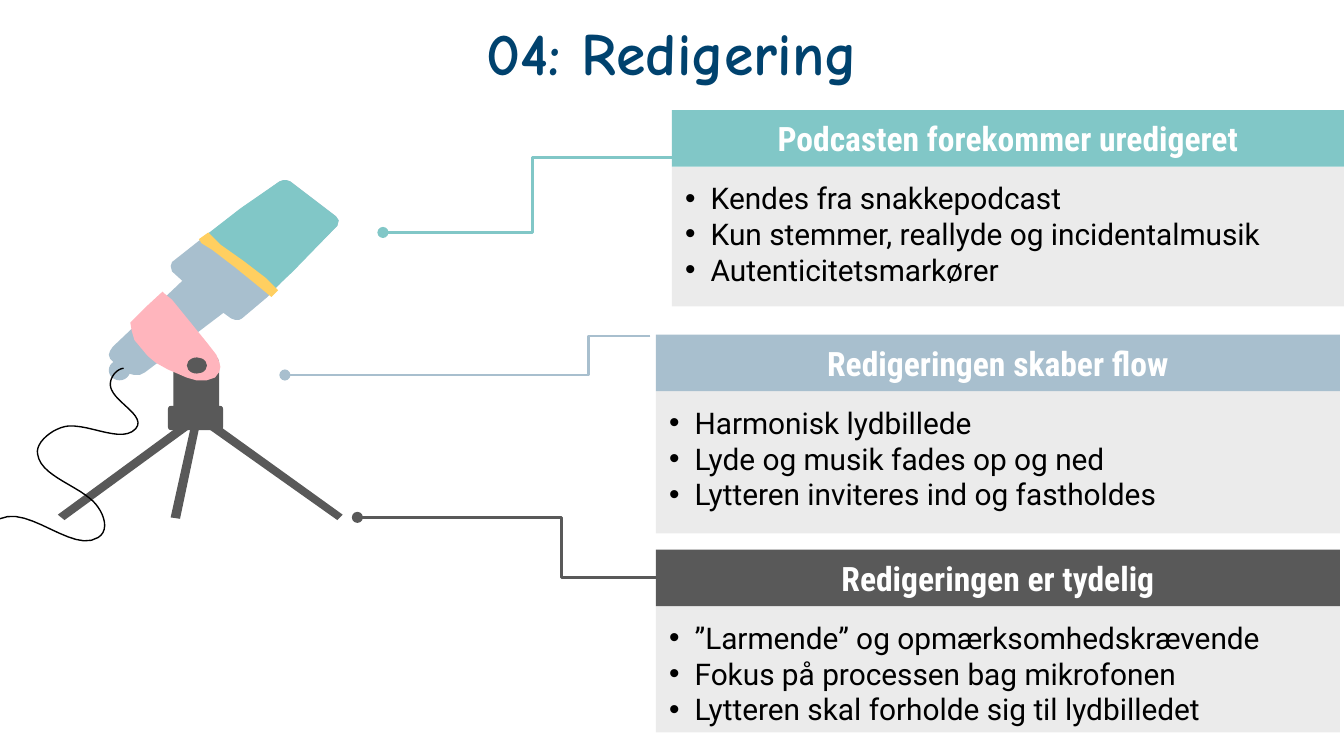
import pptx
import pptx.util
import pptx.dml.color
import pptx.enum.shapes
import pptx.enum.text
import pptx.oxml.ns
from lxml import etree
from pptx.util import Inches

SHAPE = pptx.enum.shapes.MSO_SHAPE
ALIGN = pptx.enum.text.PP_ALIGN
ANCHOR = pptx.enum.text.MSO_ANCHOR

NAVY, TEAL, STEEL, GRAPHITE = "00426E", "81C7C7", "A8BFCE", "595959"
PINK, YELLOW, BLACK, WHITE = "FFB5BD", "FFCF60", "000000", "FFFFFF"


def color(value):
    return pptx.dml.color.RGBColor.from_string(value)


def child(parent, tag, **attributes):
    return etree.SubElement(parent, pptx.oxml.ns.qn(tag), attributes)


def write(frame, lines, size, font, ink, bold=False, align=ALIGN.LEFT,
          anchor=ANCHOR.TOP, bullet=None):
    frame.word_wrap = True
    frame.auto_size = pptx.enum.text.MSO_AUTO_SIZE.NONE
    frame.vertical_anchor = anchor
    frame.margin_left = frame.margin_right = Inches(0.1)
    frame.margin_top = frame.margin_bottom = Inches(0.1)
    for index, line in enumerate(lines):
        para = frame.paragraphs[0] if index == 0 else frame.add_paragraph()
        para.alignment = align
        if bullet:
            props = para._p.get_or_add_pPr()
            props.set("marL", str(Inches(0.19)))
            props.set("indent", str(-Inches(0.19)))
            child(child(props, "a:buClr"), "a:srgbClr", val=ink)
            child(props, "a:buFont", typeface="Arial")
            child(props, "a:buChar", char=bullet)
        span = para.add_run()
        span.text = line
        span.font.size = pptx.util.Pt(size)
        span.font.name = font
        span.font.bold = bold
        span.font.color.rgb = color(ink)


def curve(start, segments, steps=12):
    points = [start]
    for a, b, end in segments:
        origin = points[-1]
        for step in range(1, steps + 1):
            t = step / steps
            points.append(tuple(
                (1 - t) ** 3 * p + 3 * (1 - t) ** 2 * t * q + 3 * (1 - t) * t ** 2 * r + t ** 3 * s
                for p, q, r, s in zip(origin, a, b, end)))
    return points


class Sheet:
    title_font, head_font, body_font = "Comic Neue", "Roboto Condensed", "Roboto"

    def __init__(self, page):
        self.page = page

    def title(self, text):
        box = self.page.shapes.title
        box.left, box.top, box.width, box.height = map(Inches, (0.5, 0.16, 9, 0.45))
        write(box.text_frame, [text], 32, self.title_font, NAVY, bold=True,
              align=ALIGN.CENTER, anchor=ANCHOR.MIDDLE)

    def group(self):
        return self.page.shapes.add_group_shape().shapes

    def paint(self, shape, fill, alpha=None):
        shape.shadow.inherit = False
        shape.line.fill.background()
        shape.fill.solid()
        shape.fill.fore_color.rgb = color(fill)
        if alpha:
            tint = shape._element.spPr.find(".//" + pptx.oxml.ns.qn("a:srgbClr"))
            child(tint, "a:alpha", val=str(alpha * 1000))

    def shape(self, canvas, kind, place, fill, alpha=None):
        shape = canvas.add_shape(kind, *map(Inches, place))
        self.paint(shape, fill, alpha)
        return shape

    def outline(self, canvas, points, closed=True):
        corners = [(Inches(x), Inches(y)) for x, y in points]
        builder = canvas.build_freeform(*corners[0], scale=1.0)
        builder.add_line_segments(corners[1:], close=closed)
        return builder.convert_to_shape()

    def polygon(self, canvas, points, fill):
        self.paint(self.outline(canvas, points), fill)

    def cable(self, canvas, points):
        cable = self.outline(canvas, points, closed=False)
        cable.shadow.inherit = False
        cable.fill.background()
        cable.line.color.rgb = color(BLACK)
        cable.line.width = pptx.util.Pt(0.75)

    def panel(self, place, fill, heading, items):
        left, top, width, height = place
        head = 0.42
        canvas = self.group()
        body = self.shape(canvas, SHAPE.RECTANGLE, (left, top + head, width, height), BLACK, alpha=8)
        write(body.text_frame, items, 16, self.body_font, BLACK, bullet="•")
        bar = self.shape(canvas, SHAPE.RECTANGLE, (left, top, width, head), fill)
        write(bar.text_frame, [heading], 18, self.head_font, WHITE, bold=True,
              align=ALIGN.CENTER, anchor=ANCHOR.MIDDLE)

    def pointer(self, start, end, bend, ink):
        kind = pptx.enum.shapes.MSO_CONNECTOR.ELBOW
        link = self.page.shapes.add_connector(kind, *map(Inches, start + end))
        link.line.color.rgb = color(ink)
        link.line.width = pptx.util.Pt(1.5)
        props = link._element.spPr
        child(props.find(".//" + pptx.oxml.ns.qn("a:avLst")), "a:gd",
              name="adj1", fmla=f"val {round(bend * 100000)}")
        child(link.line._get_or_add_ln(), "a:tailEnd", type="oval")
        child(props, "a:effectLst")


def draw_microphone(sheet):
    canvas = sheet.group()
    sheet.shape(canvas, SHAPE.OVAL, (0.81, 2.68, 0.16, 0.15), STEEL)
    sheet.polygon(canvas, [
        (1.5, 2), (1.47, 2), (1.42, 2.03), (0.84, 2.58), (0.82, 2.61), (0.81, 2.64), (0.82, 2.67),
        (0.85, 2.7), (0.93, 2.76), (0.96, 2.78), (1, 2.79), (1.04, 2.79), (1.08, 2.77), (1.74, 2.27),
        (1.77, 2.22), (1.77, 2.19), (1.74, 2.14), (1.58, 2.02), (1.54, 2)], STEEL)
    sheet.polygon(canvas, [
        (2.11, 1.34), (2.08, 1.35), (1.77, 1.57), (1.47, 1.8), (1.28, 1.95), (1.27, 1.98),
        (1.28, 2.02), (1.39, 2.12), (1.5, 2.21), (1.61, 2.29), (1.72, 2.37), (1.75, 2.38),
        (1.78, 2.38), (1.8, 2.37), (1.99, 2.21), (2.19, 2), (2.51, 1.68), (2.52, 1.64),
        (2.5, 1.61), (2.16, 1.35), (2.13, 1.34)], STEEL)
    sheet.polygon(canvas, [(1.45, 3.04), (1.27, 3.85), (1.34, 3.86), (1.51, 3.05)], GRAPHITE)
    sheet.shape(canvas, SHAPE.ROUND_2_SAME_RECTANGLE, (1.29, 2.64, 0.34, 0.53), GRAPHITE)
    collar = sheet.shape(canvas, SHAPE.ROUNDED_RECTANGLE, (1.25, 3.02, 0.41, 0.18), GRAPHITE)
    collar.adjustments[0] = 0.12
    sheet.polygon(canvas, [(1.48, 3.06), (0.43, 3.83), (0.48, 3.87), (1.48, 3.14),
                           (2.51, 3.87), (2.55, 3.83)], GRAPHITE)
    sheet.polygon(canvas, [
        (1.21, 2.17), (1.08, 2.29), (0.97, 2.4), (0.98, 2.46), (1, 2.53), (1.05, 2.59), (1.1, 2.65),
        (1.16, 2.7), (1.25, 2.75), (1.39, 2.81), (1.46, 2.83), (1.54, 2.83), (1.6, 2.81),
        (1.63, 2.77), (1.64, 2.73), (1.63, 2.69), (1.61, 2.64), (1.54, 2.55), (1.41, 2.39),
        (1.28, 2.23), (1.23, 2.19)], PINK)
    sheet.polygon(canvas, [
        (2.11, 1.34), (2.08, 1.35), (1.79, 1.55), (1.52, 1.76), (1.66, 1.85), (1.79, 1.95),
        (1.92, 2.05), (2.03, 2.16), (2.18, 2.02), (2.51, 1.68), (2.52, 1.64), (2.5, 1.61),
        (2.33, 1.48), (2.16, 1.35), (2.13, 1.34)], TEAL)
    sheet.polygon(canvas, [
        (1.55, 1.73), (1.48, 1.78), (1.5, 1.81), (1.58, 1.86), (1.75, 1.99), (1.91, 2.12),
        (2.02, 2.21), (2.07, 2.16), (1.98, 2.07), (1.81, 1.94), (1.64, 1.82)], YELLOW)
    sheet.shape(canvas, SHAPE.OVAL, (1.39, 2.66, 0.15, 0.12), GRAPHITE)
    sheet.cable(canvas, curve((0.92, 2.74), [
        ((0.85, 2.75), (0.8, 2.84), (0.83, 2.9)),
        ((0.87, 3), (1.09, 3.1), (1.01, 3.19)),
        ((0.91, 3.3), (0.68, 3.16), (0.51, 3.17)),
        ((0.4, 3.18), (0.26, 3.29), (0.28, 3.38)),
        ((0.3, 3.53), (0.54, 3.6), (0.67, 3.71)),
        ((0.76, 3.78), (0.83, 3.94), (0.73, 4)),
        ((0.54, 4.12), (0.22, 3.76), (0, 3.86))]))


def main():
    deck = pptx.Presentation()
    deck.slide_width = Inches(10)
    deck.slide_height = deck.slide_width * 9 // 16
    sheet = Sheet(deck.slides.add_slide(deck.slide_layouts[5]))
    sheet.title("04: Redigering")
    draw_microphone(sheet)
    sheet.panel((5, 0.82, 5, 1.04), TEAL, "Podcasten forekommer uredigeret", [
        "Kendes fra snakkepodcast",
        "Kun stemmer, reallyde og incidentalmusik",
        "Autenticitetsmarkører"])
    sheet.panel((4.88, 2.49, 5.09, 1.06), STEEL, "Redigeringen skaber flow", [
        "Harmonisk lydbillede",
        "Lyde og musik fades op og ned",
        "Lytteren inviteres ind og fastholdes"])
    sheet.panel((4.88, 4.09, 5.09, 0.94), GRAPHITE, "Redigeringen er tydelig", [
        "”Larmende” og opmærksomhedskrævende",
        "Fokus på processen bag mikrofonen",
        "Lytteren skal forholde sig til lydbilledet"])
    sheet.pointer((5.08, 1.17), (2.85, 1.73), 0.5, TEAL)
    sheet.pointer((4.84, 2.5), (2.12, 2.79), 0.17, STEEL)
    sheet.pointer((5.7, 4.3), (2.66, 3.85), 0.5, GRAPHITE)
    deck.save("out.pptx")


if __name__ == "__main__":
    main()
